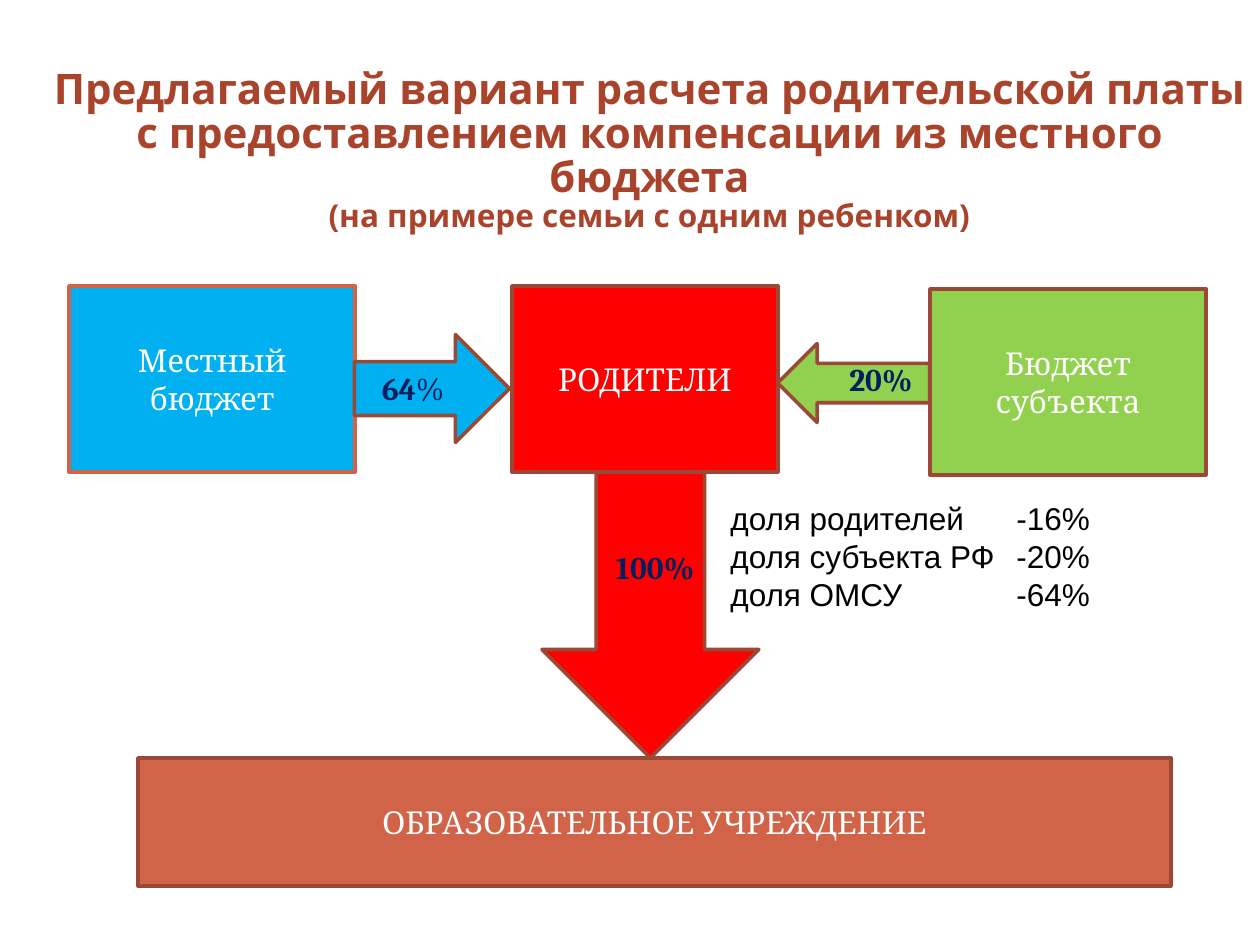
import pptx
import pptx.util
import pptx.dml.color
import pptx.enum.shapes
import pptx.enum.text
import lxml.etree

RGB = pptx.dml.color.RGBColor
SHAPE = pptx.enum.shapes.MSO_SHAPE
ALIGN = pptx.enum.text.PP_ALIGN
ANCHOR = pptx.enum.text.MSO_ANCHOR
FIT = pptx.enum.text.MSO_AUTO_SIZE

WHITE = RGB(0xFF, 0xFF, 0xFF)
BLACK = RGB(0x00, 0x00, 0x00)
NAVY = RGB(0x00, 0x20, 0x60)
RED = RGB(0xFF, 0x00, 0x00)
BLUE = RGB(0x00, 0xB0, 0xF0)
GREEN = RGB(0x92, 0xD0, 0x50)
CORAL = RGB(0xD1, 0x63, 0x49)
BROWN = RGB(0x9B, 0x49, 0x36)
RUST = RGB(0xA9, 0x43, 0x2B)

SCALE = 914400 / 126
BOX_H = 186


def emu(px):
    return pptx.util.Emu(round(px * SCALE))


class Board:
    """Holds the text styles and the slide being drawn."""

    box_font = {"name": "Cambria", "size": pptx.util.Pt(18), "bold": False}
    mark_font = {**box_font, "bold": True}
    list_font = {**box_font, "name": "Arial"}
    head_font = {"name": "Open Sans", "size": pptx.util.Pt(24), "bold": True}

    def __init__(self, slide):
        self.slide = slide

    def add_text(self, para, text, color, style):
        run = para.add_run()
        run.text = text
        for key, value in style.items():
            setattr(run.font, key, value)
        run.font.color.rgb = color

    def frame(self, shape, **format):
        values = {"word_wrap": True, "auto_size": FIT.NONE,
                  "vertical_anchor": ANCHOR.MIDDLE, **format}
        for key, value in values.items():
            setattr(shape.text_frame, key, value)
        return shape.text_frame

    def title(self, area, main, note):
        shape = self.slide.shapes.title
        shape.left, shape.top, shape.width, shape.height = map(emu, area)
        para = self.frame(shape).paragraphs[0]
        para.alignment = ALIGN.CENTER
        para.line_spacing = 0.87
        self.add_text(para, main, RUST, self.head_font)
        para.add_line_break()
        self.add_text(para, note, RUST,
                      {**self.head_font, "size": pptx.util.Pt(18)})

    def shape(self, kind, area, fill, line=BROWN):
        shape = self.slide.shapes.add_shape(kind, *map(emu, area))
        shape.shadow.inherit = False
        shape.fill.solid()
        shape.fill.fore_color.rgb = fill
        shape.line.color.rgb = line
        shape.line.width = pptx.util.Pt(2)
        return shape

    def arrow(self, area, fill, turn=0):
        self.shape(SHAPE.DOWN_ARROW, area, fill).rotation = turn

    def box(self, area, text, fill, line=BROWN):
        shape = self.shape(SHAPE.RECTANGLE, area, fill, line)
        para = self.frame(shape).paragraphs[0]
        para.alignment = ALIGN.CENTER
        self.add_text(para, text, WHITE, self.box_font)

    def mark(self, area, *parts):
        """Add a centred label made of (text, style) parts."""
        shape = self.slide.shapes.add_textbox(*map(emu, area))
        para = self.frame(shape, word_wrap=False).paragraphs[0]
        para.alignment = ALIGN.CENTER
        for text, style in parts:
            self.add_text(para, text, NAVY, style)

    def shares(self, area, rows, stop):
        """List names and values, the values lined up at a tab stop."""
        shape = self.slide.shapes.add_textbox(*map(emu, area))
        frame = self.frame(shape, vertical_anchor=ANCHOR.TOP)
        for i, row in enumerate(rows):
            para = frame.add_paragraph() if i else frame.paragraphs[0]
            self.add_text(para, "\t".join(row), BLACK, self.list_font)
            props = para._p.get_or_add_pPr()
            space = "{" + props.nsmap["a"] + "}"
            tabs = lxml.etree.SubElement(props, space + "tabLst")
            lxml.etree.SubElement(tabs, space + "tab",
                                  pos=str(emu(stop)), algn="l")


def main():
    deck = pptx.Presentation()
    deck.slide_width = emu(1260)
    deck.slide_height = emu(945)
    board = Board(deck.slides.add_slide(deck.slide_layouts[5]))

    board.title((39, 29, 1221, 246),
                "Предлагаемый вариант расчета родительской платы "
                "с предоставлением компенсации из местного бюджета",
                "(на примере семьи с одним ребенком)")

    board.arrow((542, 472, 217, 286), RED)
    board.mark((601, 542, 108, 50), ("100%", board.mark_font))

    board.box((69, 286, 286, BOX_H), "Местный бюджет", BLUE, CORAL)
    board.box((512, 286, 266, BOX_H), "РОДИТЕЛИ", RED)
    board.box((930, 289, 276, BOX_H), "Бюджет субъекта", GREEN)
    board.box((138, 758, 1033, 128), "ОБРАЗОВАТЕЛЬНОЕ УЧРЕЖДЕНИЕ", CORAL)

    board.arrow((378, 311, 108, 155), BLUE, 270)
    board.arrow((814, 307, 79, 152), GREEN, 90)
    board.mark((364, 363, 98, 50),
               ("64", board.mark_font), ("%", board.box_font))
    board.mark((827, 354, 108, 50), ("20%", board.mark_font))

    board.shares((718, 493, 483, 127),
                 [("доля родителей", "-16%"),
                  ("доля субъекта РФ", "-20%"),
                  ("доля ОМСУ", "-64%")], 286)
    deck.save("out.pptx")


if __name__ == "__main__":
    main()
